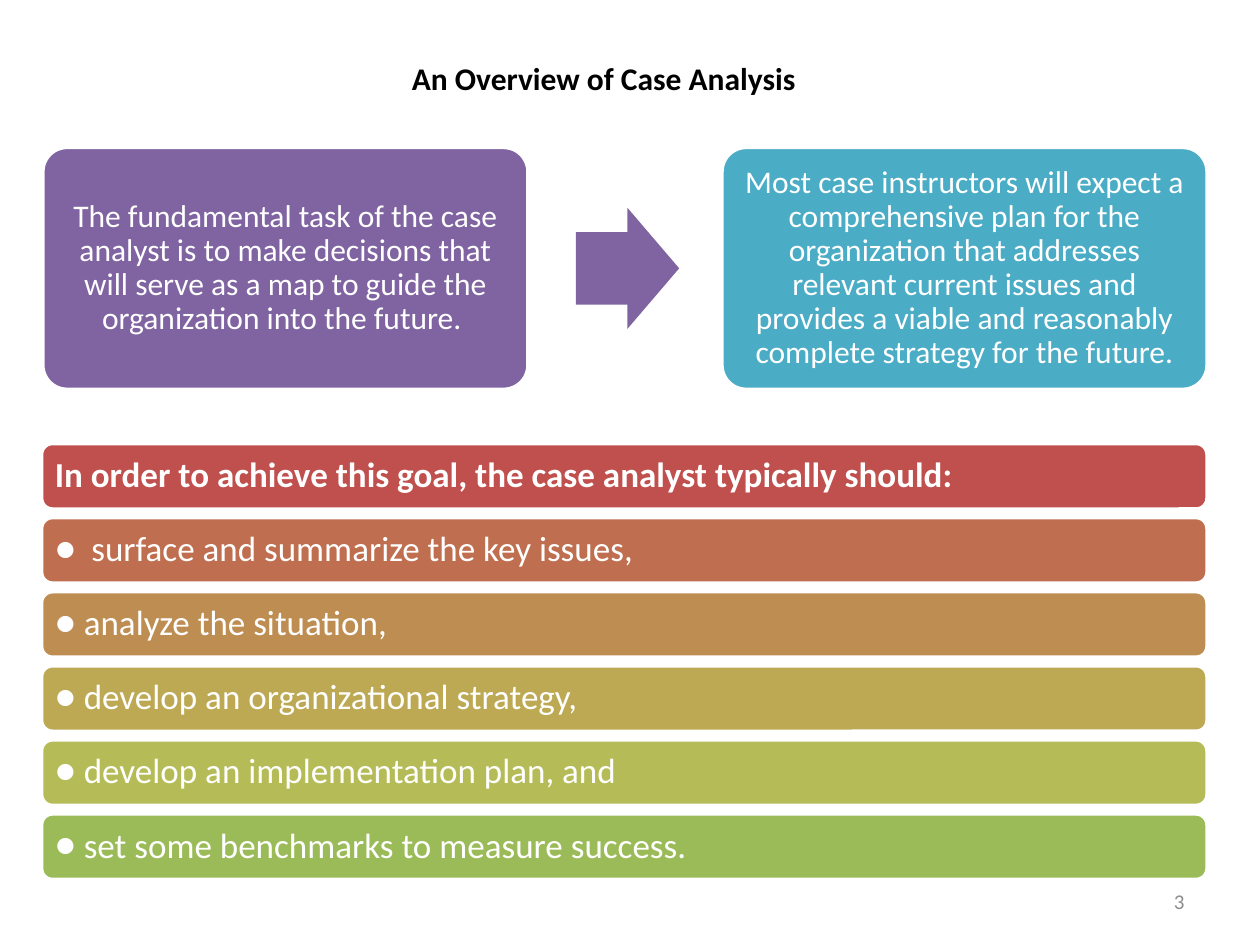
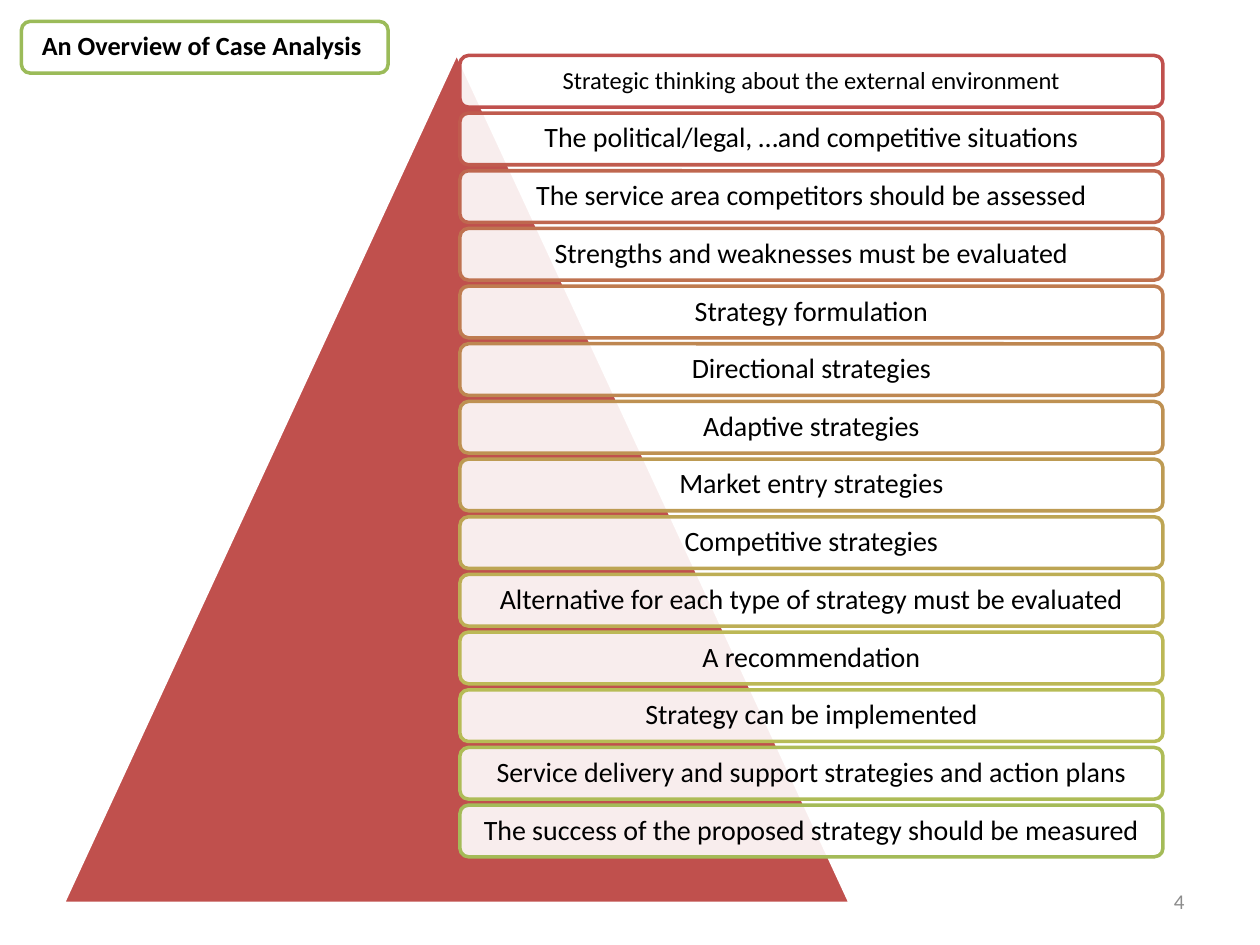
import pptx
import pptx.util
import pptx.dml.color
import pptx.enum.shapes
import pptx.enum.text
import pptx.oxml.ns
from lxml import etree

Inches = pptx.util.Inches
Pt = pptx.util.Pt
MSO = pptx.enum.shapes.MSO_SHAPE
ALIGN = pptx.enum.text.PP_ALIGN
MIDDLE = pptx.enum.text.MSO_ANCHOR.MIDDLE
qn = pptx.oxml.ns.qn

# Shared look
FONT = "Calibri"
WHITE, BLACK, GREY = "FFFFFF", "000000", "8C8C8C"
RED, GREEN, PURPLE, TEAL = "C0504D", "9BBB59", "8064A2", "4BACC6"
TITLE = "An Overview of Case Analysis"


def color(fmt, value):
    fmt.rgb = pptx.dml.color.RGBColor.from_string(value)


def add_shape(slide, kind, box, fill=None, line=None, text="", size=18, ink=BLACK,
              bold=False, align=ALIGN.CENTER, inset=0.07, opacity=None):
    """Add a shape, or a text box when kind is None, with one line of text."""
    box = [Inches(v) for v in box]
    if kind is None:
        sp = slide.shapes.add_textbox(*box)
    else:
        sp = slide.shapes.add_shape(kind, *box)
        sp.shadow.inherit = False
        sp.fill.solid()
        color(sp.fill.fore_color, fill)
        if opacity:
            clr = sp.fill._xPr.find(".//" + qn("a:srgbClr"))
            etree.SubElement(clr, qn("a:alpha"), val=str(opacity * 1000))
        if line:
            color(sp.line.color, line)
            sp.line.width = Pt(2)
        else:
            sp.line.fill.background()
    if text:
        tf = sp.text_frame
        margin = Inches(inset)
        frame = {"word_wrap": True, "vertical_anchor": MIDDLE, "margin_left": margin,
                 "margin_right": margin, "margin_top": margin, "margin_bottom": margin}
        for name, value in frame.items():
            setattr(tf, name, value)
        p = tf.paragraphs[0]
        p.alignment = align
        p.line_spacing = 0.9 if kind else 1.0
        r = p.add_run()
        r.text = text
        for name, value in {"name": FONT, "size": Pt(size), "bold": bold}.items():
            setattr(r.font, name, value)
        color(r.font.color, ink)
    return sp


prs = pptx.Presentation()
prs.slide_width, prs.slide_height = Inches(10), Inches(7.5)
slides = [prs.slides.add_slide(prs.slide_layouts[6]) for _ in range(2)]

# Slide numbers as live fields, counting from 3
prs.element.set("firstSlideNum", "3")
for number, s in enumerate(slides, 3):
    sp = add_shape(s, None, (7.17, 6.95, 2.33, 0.4), text=str(number), size=12,
                   ink=GREY, align=ALIGN.RIGHT, inset=0.1)
    p = sp.text_frame.paragraphs[0]
    r = p.runs[0]._r
    fld = etree.SubElement(p._p, qn("a:fld"), type="slidenum",
                           id="{B6F15528-21DE-4FAA-801E-634DDDAF4B2B}")
    fld.extend(list(r))
    p._p.remove(r)

# Slide 1: title
s = slides[0]
sp = add_shape(s, None, (3.17, 0.42, 3.33, 0.4), text=TITLE, bold=True,
               align=ALIGN.LEFT, inset=0.1)
sp.text_frame.word_wrap = False

# Slide 1: from task to plan
cards = [
    (0.34, PURPLE, "The fundamental task of the case analyst is to make decisions that "
                   "will serve as a map to guide the organization into the future. "),
    (5.73, TEAL, "Most case instructors will expect a comprehensive plan for the "
                 "organization that addresses relevant current issues and provides a "
                 "viable and reasonably complete strategy for the future."),
]
for left, fill, text in cards:
    sp = add_shape(s, MSO.ROUNDED_RECTANGLE, (left, 1.17, 3.85, 1.92), fill, WHITE,
                   text, ink=WHITE)
    sp.adjustments[0] = 0.1
sp = add_shape(s, MSO.RIGHT_ARROW, (4.57, 1.65, 0.82, 0.96), PURPLE)
sp.adjustments[0] = 0.6

# Slide 1: goal heading and its steps, with the text indent of each bullet
bars = [
    (RED, 0, "In order to achieve this goal, the case analyst typically should:"),
    ("BF6F4F", 0.29, "surface and summarize the key issues,"),
    ("BE8D52", 0.23, "analyze the situation,"),
    ("BDA954", 0.23, "develop an organizational strategy,"),
    ("B5BC57", 0.23, "develop an implementation plan, and"),
    (GREEN, 0.23, "set some benchmarks to measure success."),
]
pitch = (6.46 - 3.52) / (len(bars) - 1)
for i, (fill, indent, text) in enumerate(bars):
    sp = add_shape(s, MSO.ROUNDED_RECTANGLE, (0.33, 3.52 + i * pitch, 9.25, 0.52), fill,
                   WHITE, text, size=20, ink=WHITE, bold=not indent,
                   align=ALIGN.LEFT, inset=0.08)
    if indent:
        pPr = sp.text_frame.paragraphs[0]._p.get_or_add_pPr()
        pPr.set("marL", str(Inches(indent)))
        pPr.set("indent", str(-Inches(indent)))
        etree.SubElement(pPr, qn("a:buFont"), typeface=FONT)
        etree.SubElement(pPr, qn("a:buChar"), char="●")

# Slide 2: pyramid
s = slides[1]
add_shape(s, MSO.ISOSCELES_TRIANGLE, (0.5, 0.42, 6.25, 6.75), RED, WHITE)

# Slide 2: stages of the analysis
stages = [
    (RED, "Strategic thinking about the external environment"),
    ("C05B4E", "The political/legal, …and competitive situations"),
    ("BF674F", "The service area competitors should be assessed"),
    ("BF7250", "Strengths and weaknesses must be evaluated"),
    ("BF7C50", "Strategy formulation"),
    ("BE8751", "Directional strategies"),
    ("BE9152", "Adaptive strategies"),
    ("BD9B53", "Market entry strategies"),
    ("BDA554", "Competitive strategies"),
    ("BDAE55", "Alternative for each type of strategy must be evaluated"),
    ("BCB856", "A recommendation"),
    ("B7BC56", "Strategy can be implemented"),
    ("AEBC57", "Service delivery and support strategies and action plans"),
    ("A4BB58", "The success of the proposed strategy should be measured"),
]
pitch = (6.39 - 0.44) / (len(stages) - 1)
for i, (line, text) in enumerate(stages):
    add_shape(s, MSO.ROUNDED_RECTANGLE, (3.65, 0.44 + i * pitch, 5.58, 0.41), WHITE, line,
              text, size=16 if i else 14, opacity=90)

# Slide 2: title
add_shape(s, MSO.ROUNDED_RECTANGLE, (0.17, 0.17, 2.91, 0.41), WHITE, GREEN,
          TITLE + " ", size=15, bold=True, inset=0.06, opacity=90)

prs.save("out.pptx")
